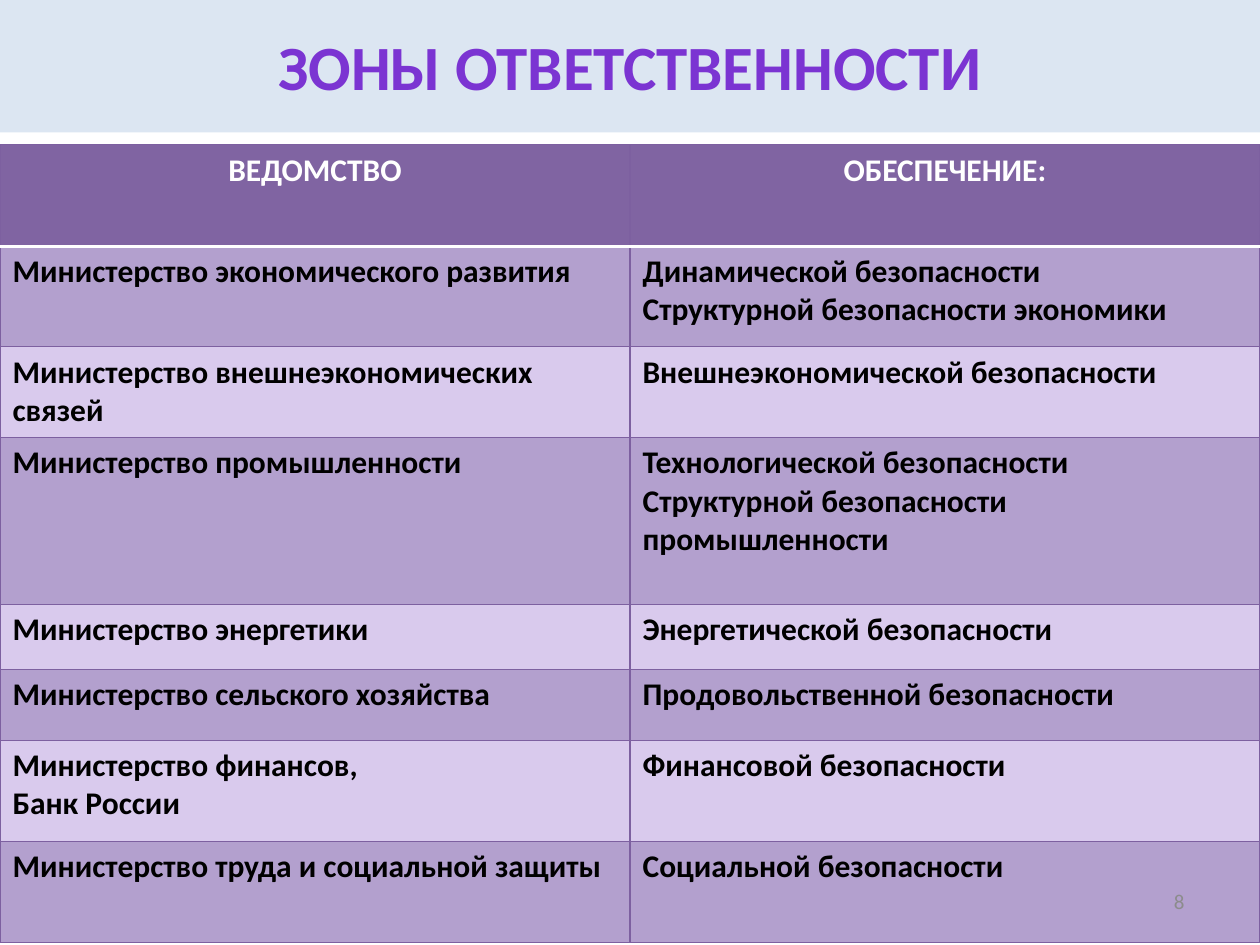
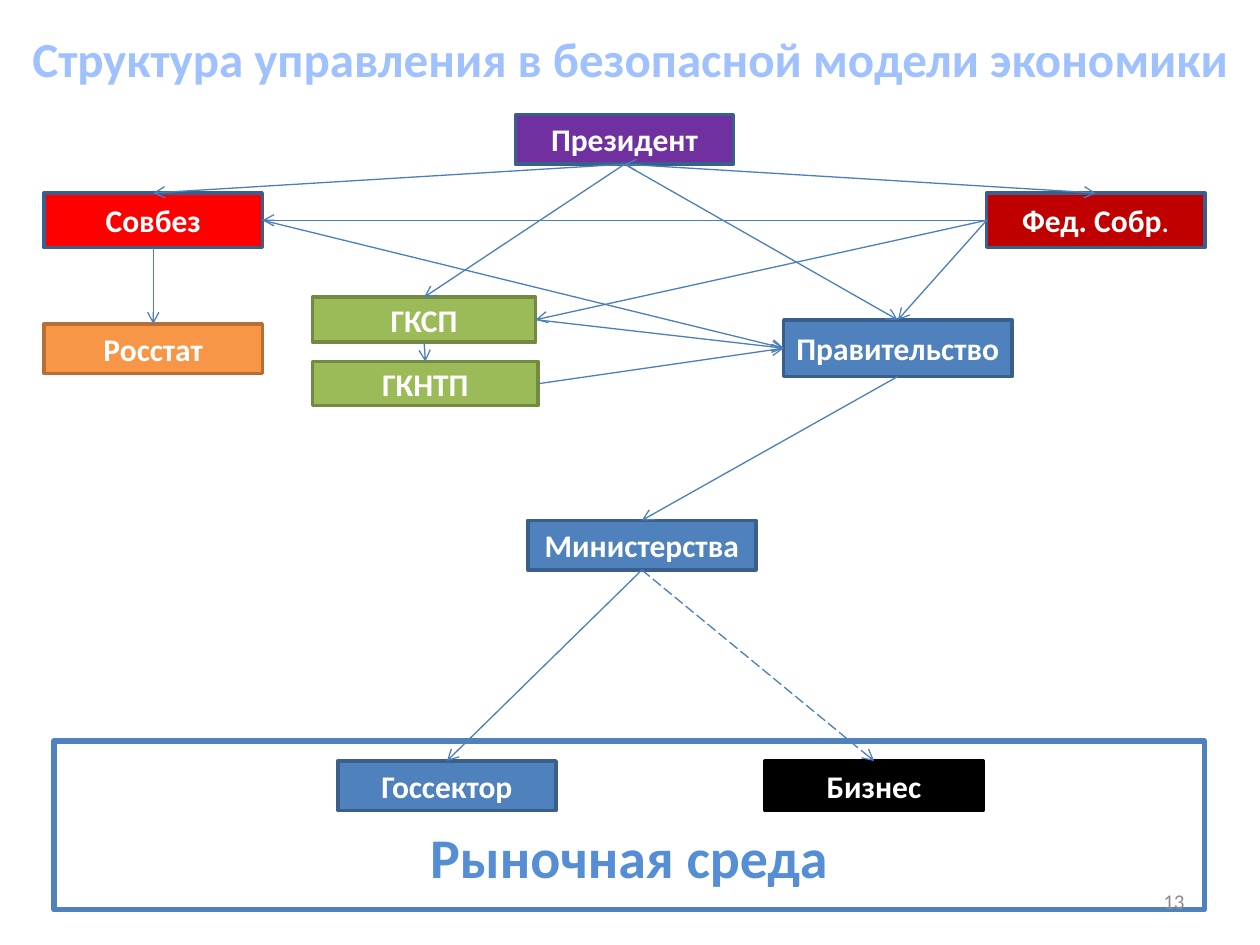
import dataclasses

import lxml.etree
import pptx
import pptx.dml.color
import pptx.enum.dml
import pptx.enum.shapes
import pptx.enum.text
import pptx.oxml.ns
import pptx.util

Cm = pptx.util.Cm
Pt = pptx.util.Pt
ALIGN = pptx.enum.text.PP_ALIGN
ANCHOR = pptx.enum.text.MSO_ANCHOR
TOP, LEFT, BOTTOM, RIGHT = range(4)


@dataclasses.dataclass(frozen=True)
class Theme:
    font: str = "Calibri"
    white: str = "FFFFFF"
    black: str = "000000"
    band: str = "DCE6F2"
    violet_title: str = "7B34D2"
    blue_title: str = "A0C1FF"
    table_header: str = "8064A2"
    table_dark: str = "B3A0CE"
    table_light: str = "D9CAED"
    table_border: str = "7D60A0"
    blue: str = "4F81BD"
    blue_edge: str = "3A5F8C"
    green: str = "9BBB59"
    green_edge: str = "738A42"
    orange: str = "F79646"
    orange_edge: str = "B76F34"
    red: str = "FF0000"
    dark_red: str = "C00000"
    purple: str = "7030A0"
    arrow: str = "4B7EBC"
    market: str = "558ED5"
    number: str = "8C8C8C"
    body_size: int = 18
    number_size: int = 12
    market_size: int = 32


THEME = Theme()
SLIDE_WIDTH, SLIDE_HEIGHT = 25.4, 19.05
NUMBER_BOX = (18.21, 17.66, 5.92, 1.02)

RESPONSIBILITIES = [
    (2.04, "ВЕДОМСТВО", "ОБЕСПЕЧЕНИЕ:"),
    (2.03, "Министерство экономического развития",
     "Динамической безопасности\nСтруктурной безопасности экономики"),
    (1.83, "Министерство внешнеэкономических связей",
     "Внешнеэкономической безопасности"),
    (3.36, "Министерство промышленности",
     "Технологической безопасности\nСтруктурной безопасности промышленности"),
    (1.32, "Министерство энергетики", "Энергетической безопасности"),
    (1.42, "Министерство сельского хозяйства", "Продовольственной безопасности"),
    (2.04, "Министерство финансов,\nБанк России", "Финансовой безопасности"),
    (2.04, "Министерство труда и социальной защиты", "Социальной безопасности"),
]

AUTHORITIES = {
    "Совбез": (0, 1.58, 4.4, 1.1, THEME.red, THEME.blue_edge),
    "Росстат": (0, 4.22, 4.4, 1, THEME.orange, THEME.orange_edge),
    "Правительство": (14.91, 4.14, 4.6, 1.14, THEME.blue, THEME.blue_edge),
    "Президент": (9.5, 0, 4.4, 1, THEME.purple, THEME.blue_edge),
    "Министерства": (9.75, 8.18, 4.6, 1, THEME.blue, THEME.blue_edge),
    "Госсектор": (5.92, 13.03, 4.4, 1, THEME.blue, THEME.blue_edge),
    "Бизнес": (14.53, 13.03, 4.4, 1, THEME.black, THEME.black),
    "ГКНТП": (5.41, 4.98, 4.55, 0.89, THEME.green, THEME.green_edge),
    "ГКСП": (5.41, 3.68, 4.5, 0.91, THEME.green, THEME.green_edge),
    "Фед. Собр": (19, 1.58, 4.4, 1.1, THEME.dark_red, THEME.blue_edge),
}

RELATIONS = [
    ("Президент", BOTTOM, "Совбез", TOP),
    ("Президент", BOTTOM, "Правительство", TOP),
    ("Совбез", BOTTOM, "Росстат", TOP),
    ("Совбез", RIGHT, "Правительство", LEFT),
    ("Правительство", BOTTOM, "Министерства", TOP),
    ("Фед. Собр", LEFT, "ГКСП", RIGHT),
    ("Фед. Собр", LEFT, "Совбез", RIGHT),
    ("ГКНТП", RIGHT, "Правительство", LEFT),
    ("Президент", BOTTOM, "ГКСП", TOP),
    ("ГКСП", RIGHT, "Правительство", LEFT),
    ("ГКСП", BOTTOM, "ГКНТП", TOP),
    ("Министерства", BOTTOM, "Госсектор", TOP),
    ("Фед. Собр", LEFT, "Правительство", TOP),
]


def rgb(color):
    return pptx.dml.color.RGBColor.from_string(color)


def write_text(text_frame, text, size=THEME.body_size, color=THEME.white,
               bold=True, align=ALIGN.CENTER, anchor=ANCHOR.MIDDLE,
               wrap=True, plain_ending=""):
    text_frame.word_wrap = wrap
    text_frame.vertical_anchor = anchor
    for index, line in enumerate(text.split("\n")):
        paragraph = text_frame.add_paragraph() if index else text_frame.paragraphs[0]
        paragraph.alignment = align
        for content, weight in ((line, bold), (plain_ending, False)):
            if content:
                run = paragraph.add_run()
                run.text = content
                run.font.name = THEME.font
                run.font.size = Pt(size)
                run.font.bold = weight
                run.font.color.rgb = rgb(color)


def add_title(slide, box, text, size, color, fill=None):
    title = slide.shapes.title
    title.left, title.top, title.width, title.height = map(Cm, box)
    if fill:
        title.fill.solid()
        title.fill.fore_color.rgb = rgb(fill)
    write_text(title.text_frame, text, size=size, color=color)


def add_slide_number(slide, box, number):
    textbox = slide.shapes.add_textbox(*map(Cm, box))
    write_text(textbox.text_frame, number, size=THEME.number_size,
               color=THEME.number, bold=False, align=ALIGN.RIGHT)


def set_cell_borders(cell, **special):
    properties = cell._tc.get_or_add_tcPr()
    for index, side in enumerate("LRTB"):
        color, width = special.get(side, (THEME.table_border, 0.75))
        line = lxml.etree.Element(pptx.oxml.ns.qn(f"a:ln{side}"), w=str(Pt(width)))
        fill = lxml.etree.SubElement(line, pptx.oxml.ns.qn("a:solidFill"))
        lxml.etree.SubElement(fill, pptx.oxml.ns.qn("a:srgbClr"), val=color)
        properties.insert(index, line)


def add_responsibility_table(slide, box, rows):
    table = slide.shapes.add_table(len(rows), 2, *map(Cm, box)).table
    header_rule = (THEME.white, 2)
    for row_index, (height, *texts) in enumerate(rows):
        table.rows[row_index].height = Cm(height)
        header = row_index == 0
        if header:
            fill, borders = THEME.table_header, {"B": header_rule}
        else:
            fill = THEME.table_dark if row_index % 2 else THEME.table_light
            borders = {"T": header_rule} if row_index == 1 else {}
        for column_index, text in enumerate(texts):
            cell = table.cell(row_index, column_index)
            cell.fill.solid()
            cell.fill.fore_color.rgb = rgb(fill)
            set_cell_borders(cell, **borders)
            write_text(cell.text_frame, text,
                       color=THEME.white if header else THEME.black,
                       align=ALIGN.CENTER if header else ALIGN.LEFT,
                       anchor=ANCHOR.TOP)
            cell.vertical_anchor = ANCHOR.TOP


def add_rectangle(slide, box, edge, width, fill=None):
    shape = slide.shapes.add_shape(
        pptx.enum.shapes.MSO_SHAPE.RECTANGLE, *map(Cm, box))
    shape.shadow.inherit = False
    if fill:
        shape.fill.solid()
        shape.fill.fore_color.rgb = rgb(fill)
    else:
        shape.fill.background()
    shape.line.color.rgb = rgb(edge)
    shape.line.width = Pt(width)
    return shape


def add_arrow(slide, source, source_side, target, target_side,
              dashed=False, two_way=False):
    connector = slide.shapes.add_connector(
        pptx.enum.shapes.MSO_CONNECTOR.STRAIGHT, 0, 0, 0, 0)
    connector.begin_connect(source, source_side)
    connector.end_connect(target, target_side)
    connector.line.color.rgb = rgb(THEME.arrow)
    connector.line.width = Pt(0.75)
    if dashed:
        connector.line.dash_style = pptx.enum.dml.MSO_LINE.LONG_DASH
    line = connector.line._get_or_add_ln()
    for end in ("headEnd", "tailEnd") if two_way else ("tailEnd",):
        lxml.etree.SubElement(line, pptx.oxml.ns.qn(f"a:{end}"), type="arrow")
    lxml.etree.SubElement(connector._element.spPr, pptx.oxml.ns.qn("a:effectLst"))


def add_market(slide, box):
    market = add_rectangle(slide, box, THEME.blue, 3)
    market.text_frame.margin_bottom = Cm(0.38)
    write_text(market.text_frame, "Рыночная среда", size=THEME.market_size,
               color=THEME.market, anchor=ANCHOR.BOTTOM)
    market.text_frame.paragraphs[0].line_spacing = 0.9


def add_management_diagram(slide, box):
    left, top, width, height = box
    nodes = {}
    for name, (x, y, node_width, node_height, fill, edge) in AUTHORITIES.items():
        node_box = (left + x, top + y, node_width, node_height)
        nodes[name] = add_rectangle(slide, node_box, edge, 2, fill)
        write_text(nodes[name].text_frame, name, wrap=False,
                   plain_ending="." if name == "Фед. Собр" else "")
    for source, source_side, target, target_side in RELATIONS:
        add_arrow(slide, nodes[source], source_side, nodes[target], target_side)
    add_arrow(slide, nodes["Президент"], BOTTOM, nodes["Фед. Собр"], TOP, two_way=True)
    add_arrow(slide, nodes["Министерства"], BOTTOM, nodes["Бизнес"], TOP, dashed=True)
    market_height = 3.4
    add_market(slide, (left + 0.2, top + height - market_height,
                       width - 0.2, market_height))


def build_responsibility_slide(slide):
    add_title(slide, (0, -0.05, SLIDE_WIDTH, 2.72), "ЗОНЫ ОТВЕТСТВЕННОСТИ",
              36, THEME.violet_title, THEME.band)
    add_responsibility_table(slide, (0, 2.92, SLIDE_WIDTH, 16.08), RESPONSIBILITIES)
    add_slide_number(slide, NUMBER_BOX, "8")


def build_management_slide(slide):
    add_title(slide, (0, 0, SLIDE_WIDTH, 2.34),
              "Структура управления в безопасной модели экономики",
              28, THEME.blue_title)
    add_management_diagram(slide, (0.89, 2.31, 23.39, 16.03))
    add_slide_number(slide, NUMBER_BOX, "13")


def main():
    presentation = pptx.Presentation()
    presentation.slide_width = Cm(SLIDE_WIDTH)
    presentation.slide_height = Cm(SLIDE_HEIGHT)
    title_only = presentation.slide_layouts[5]
    for build in (build_responsibility_slide, build_management_slide):
        build(presentation.slides.add_slide(title_only))
    presentation.save("out.pptx")


if __name__ == "__main__":
    main()
